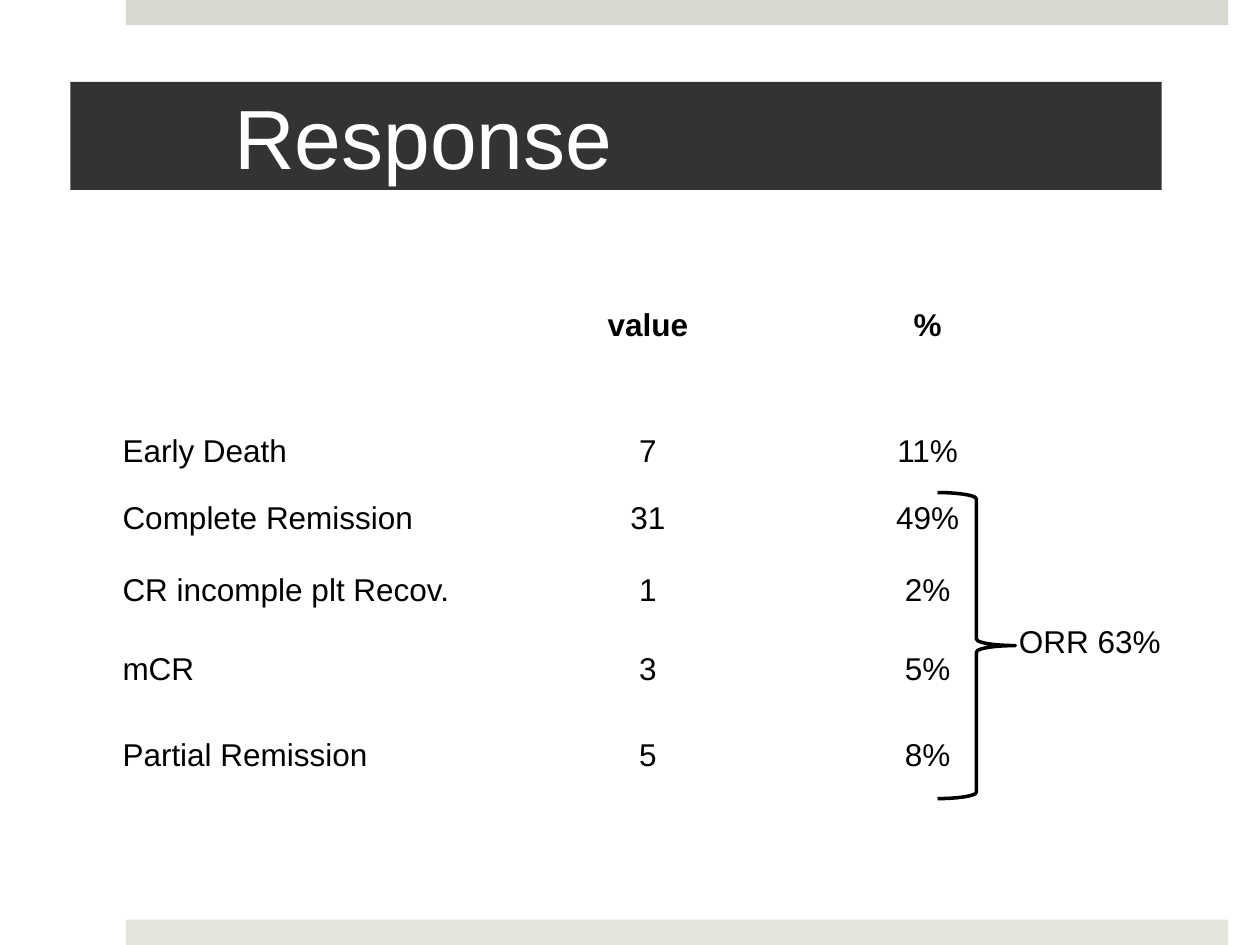
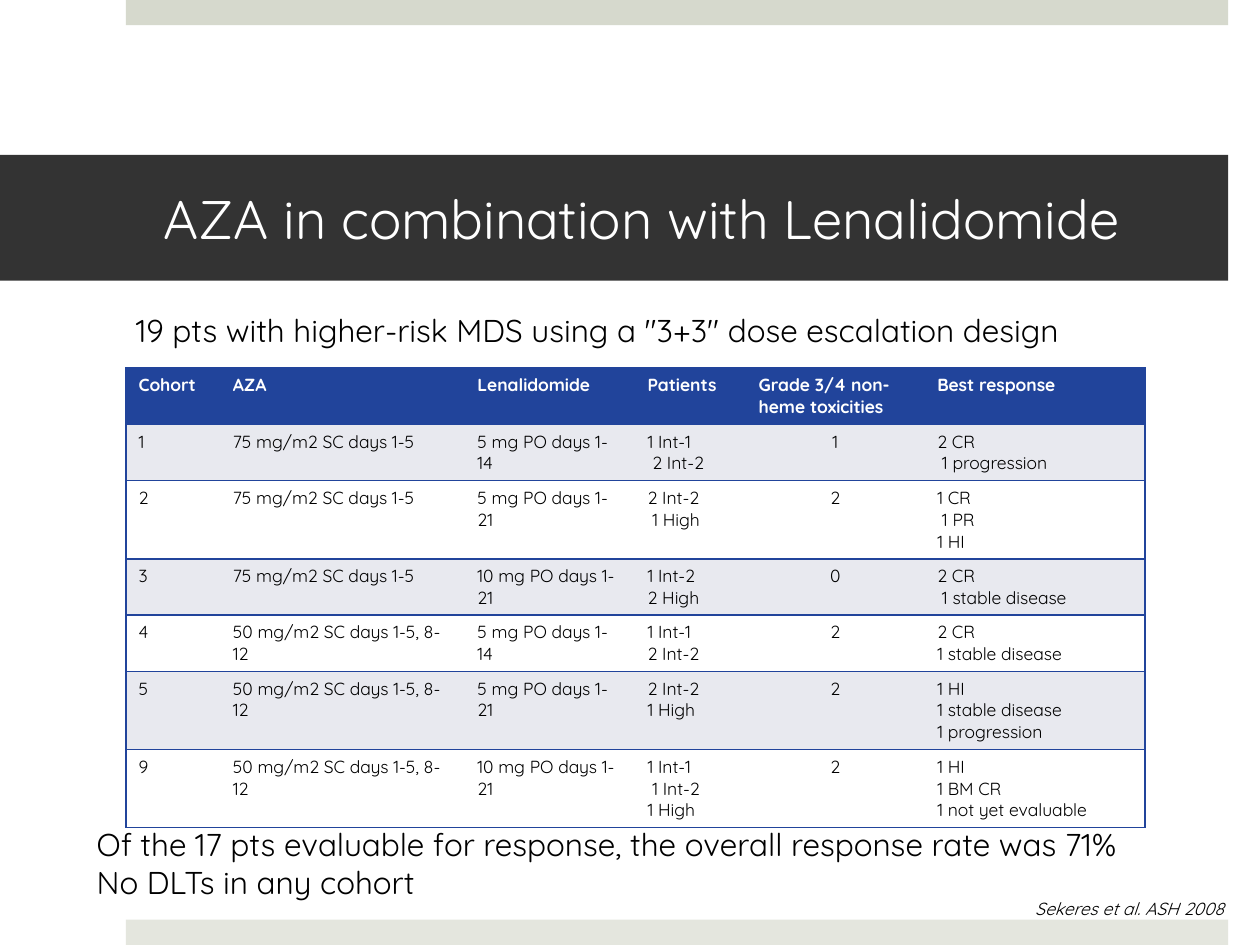
"""Build two slides on treatment response: a response table and a dose escalation table."""
from dataclasses import dataclass

from lxml import etree
from pptx import Presentation
from pptx.dml.color import RGBColor
from pptx.enum.shapes import MSO_SHAPE
from pptx.enum.text import MSO_ANCHOR, MSO_AUTO_SIZE, PP_ALIGN
from pptx.oxml.ns import qn
from pptx.util import Cm, Pt

RECT, BRACE = MSO_SHAPE.RECTANGLE, MSO_SHAPE.RIGHT_BRACE
LEFT, CENTER = PP_ALIGN.LEFT, PP_ALIGN.CENTER
MIDDLE = MSO_ANCHOR.MIDDLE
FIT, NO_FIT = MSO_AUTO_SIZE.SHAPE_TO_FIT_TEXT, MSO_AUTO_SIZE.NONE
PLAIN_TABLE_STYLE = "{2D5ABB26-0587-4C30-8999-92F81FD0307C}"


@dataclass(frozen=True)
class Theme:
    sans: str = "Arial"
    rounded: str = "Quicksand"
    black: str = "000000"
    white: str = "FFFFFF"
    title_fill: str = "333333"
    band_top: str = "D6D9CD"
    band_bottom: str = "E4E6DE"
    blue: str = "21449B"
    stripe: str = "E8E9EF"
    big_title: float = 48
    title: float = 31
    body: float = 18
    small: float = 10


T = Theme()
WIDTH, HEIGHT = 25.4, 19.05
BAND_LEFT, BAND_WIDTH, BAND_HEIGHT = 2.54, 22.22, 0.51
BANDS = [(0, T.band_top), (HEIGHT - BAND_HEIGHT, T.band_bottom)]
TITLE_MARGINS = {"margin_left": 3.3, "margin_right": 0.76,
                 "margin_top": 0.13, "margin_bottom": 0.13}
TIGHT_MARGINS = {"margin_left": 0.18, "margin_right": 0.18,
                 "margin_top": 0.1, "margin_bottom": 0.1}

RESPONSE = {
    "rows": [
        ("", "value", "%"),
        ("Early Death", "7", "11%"),
        ("Complete Remission", "31", "49%"),
        ("CR incomple plt Recov.", "1", "2%"),
        ("mCR", "3", "5%"),
        ("Partial Remission", "5", "8%"),
    ],
    "at": (2.29, 6.1),
    "widths": (7.95, 5.64, 5.64),
    "heights": (2.54, 1.35, 1.45, 1.6, 1.73, 1.73),
}
OVERALL = ("ORR 63%", (20.29, 12.42, 3.73, 1.02))
BRACE_BOX = (18.9, 9.93, 1.57, 6.17)

COHORTS = {
    "rows": [
        ("Cohort", "AZA", "Lenalidomide", "Patients",
         "Grade 3/4 non-heme toxicities", "Best response"),
        ("1", "75 mg/m2 SC days 1-5", "5 mg PO days 1-14",
         "1 Int-1\n 2 Int-2", "1", "2 CR\n 1 progression"),
        ("2", "75 mg/m2 SC days 1-5", "5 mg PO days 1-21",
         "2 Int-2\n 1 High", "2", "1 CR\n 1 PR\n1 HI"),
        ("3", "75 mg/m2 SC days 1-5", "10 mg PO days 1-21",
         "1 Int-2\n2 High", "0", "2 CR\n 1 stable disease"),
        ("4", "50 mg/m2 SC days 1-5, 8-12", "5 mg PO days 1-14",
         "1 Int-1\n2 Int-2", "2", "2 CR\n1 stable disease"),
        ("5", "50 mg/m2 SC days 1-5, 8-12", "5 mg PO days 1-21",
         "2 Int-2\n1 High", "2", "1 HI\n1 stable disease\n1 progression"),
        ("9", "50 mg/m2 SC days 1-5, 8-12", "10 mg PO days 1-21",
         "1 Int-1\n 1 Int-2\n1 High", "2", "1 HI\n1 BM CR\n1 not yet evaluable"),
    ],
    "at": (2.54, 7.42),
    "widths": (1.9, 4.93, 3.43, 2.24, 3.6, 4.44),
    "heights": (1.04,) * 7,
}
TOXICITY_COLUMN = 4
COHORT_NOTES = [
    ('19 pts with higher-risk MDS using a "3+3" dose escalation design',
     (2.49, 6.15, 19.96, 1.02), {"size": T.body}),
    ("Of the 17 pts evaluable for response, the overall response rate was 71%\n"
     "No DLTs in any cohort",
     (1.7, 16.51, 22.53, 1.9), {"size": T.body}),
    ("Sekeres et al. ASH 2008",
     (20.62, 17.98, 4.45, 0.69), {"size": T.small, "italic": True}),
]


def rgb(value):
    return RGBColor.from_string(value)


def box(values):
    return [Cm(v) for v in values]


def set_margins(target, margins):
    for name, value in margins.items():
        setattr(target, name, Cm(value))


def write(tf, text, name, size, color=T.black, align=LEFT, **style):
    for i, line in enumerate(text.split("\n")):
        p = tf.paragraphs[0] if i == 0 else tf.add_paragraph()
        p.alignment = align
        r = p.add_run()
        r.text = line
        fmt = {"name": name, "size": Pt(size), **style}
        for key, value in fmt.items():
            setattr(r.font, key, value)
        r.font.color.rgb = rgb(color)


def add_base(prs, title, area, name, size):
    s = prs.slides.add_slide(prs.slide_layouts[5])
    for top, color in BANDS:
        band = s.shapes.add_shape(RECT, *box((BAND_LEFT, top, BAND_WIDTH, BAND_HEIGHT)))
        band.shadow.inherit = False
        band.fill.solid()
        band.fill.fore_color.rgb = rgb(color)
        band.line.fill.background()
    sp = s.shapes.title
    sp.left, sp.top, sp.width, sp.height = box(area)
    sp.fill.solid()
    sp.fill.fore_color.rgb = rgb(T.title_fill)
    tf = sp.text_frame
    tf.auto_size, tf.vertical_anchor, tf.word_wrap = NO_FIT, MIDDLE, True
    set_margins(tf, TITLE_MARGINS)
    write(tf, title, name, size, T.white)
    return s


def add_note(s, text, area, name, size, wrap=False, **style):
    tf = s.shapes.add_textbox(*box(area)).text_frame
    tf.word_wrap, tf.auto_size = wrap, FIT
    write(tf, text, name, size, **style)


def add_grid(s, rows, at, widths, heights):
    area = box((*at, sum(widths), sum(heights)))
    table = s.shapes.add_table(len(rows), len(widths), *area).table
    table.first_row = table.horz_banding = False
    table._tbl.tblPr.find(qn("a:tableStyleId")).text = PLAIN_TABLE_STYLE
    for column, width in zip(table.columns, widths):
        column.width = Cm(width)
    for row, height in zip(table.rows, heights):
        row.height = Cm(height)
    return [(i, j, table.cell(i, j), text)
            for i, row in enumerate(rows) for j, text in enumerate(row)]


def add_borders(cell, sides, color):
    tc_pr = cell._tc.get_or_add_tcPr()
    for side in sides:
        ln = etree.SubElement(tc_pr, qn(f"a:ln{side}"), w=str(Pt(1)))
        fill = etree.SubElement(ln, qn("a:solidFill"))
        etree.SubElement(fill, qn("a:srgbClr"), val=color)


def build_response(prs):
    s = add_base(prs, "Response", (1.42, 1.65, 22, 2.18), T.sans, T.big_title)
    for i, j, cell, text in add_grid(s, **RESPONSE):
        cell.fill.background()
        set_margins(cell, TIGHT_MARGINS)
        if text:
            write(cell.text_frame, text, T.sans, T.body,
                  align=CENTER if j else LEFT, bold=i == 0)
    text, area = OVERALL
    add_note(s, text, area, T.sans, T.body, wrap=True)
    brace = s.shapes.add_shape(BRACE, *box(BRACE_BOX))
    brace.shadow.inherit = False
    brace.fill.background()
    brace.line.color.rgb = rgb(T.black)
    brace.line.width = Pt(2)


def build_cohorts(prs):
    s = add_base(prs, "AZA in combination with Lenalidomide",
                 (0, 3.12, 24.76, 2.54), T.rounded, T.title)
    last = len(COHORTS["widths"]) - 1
    for i, j, cell, text in add_grid(s, **COHORTS):
        header = i == 0
        sides = ("L" if j == 0 else "") + ("R" if j == last else "") + "TB"
        add_borders(cell, sides, T.blue)
        cell.fill.solid()
        cell.fill.fore_color.rgb = rgb(T.blue if header else T.stripe if i % 2 else T.white)
        centered = j == TOXICITY_COLUMN and not header
        write(cell.text_frame, text, T.rounded, T.small, T.white if header else T.black,
              CENTER if centered else LEFT, bold=header)
    for text, area, style in COHORT_NOTES:
        add_note(s, text, area, T.rounded, **style)


def main():
    prs = Presentation()
    prs.slide_width, prs.slide_height = Cm(WIDTH), Cm(HEIGHT)
    build_response(prs)
    build_cohorts(prs)
    prs.save("out.pptx")


if __name__ == "__main__":
    main()
